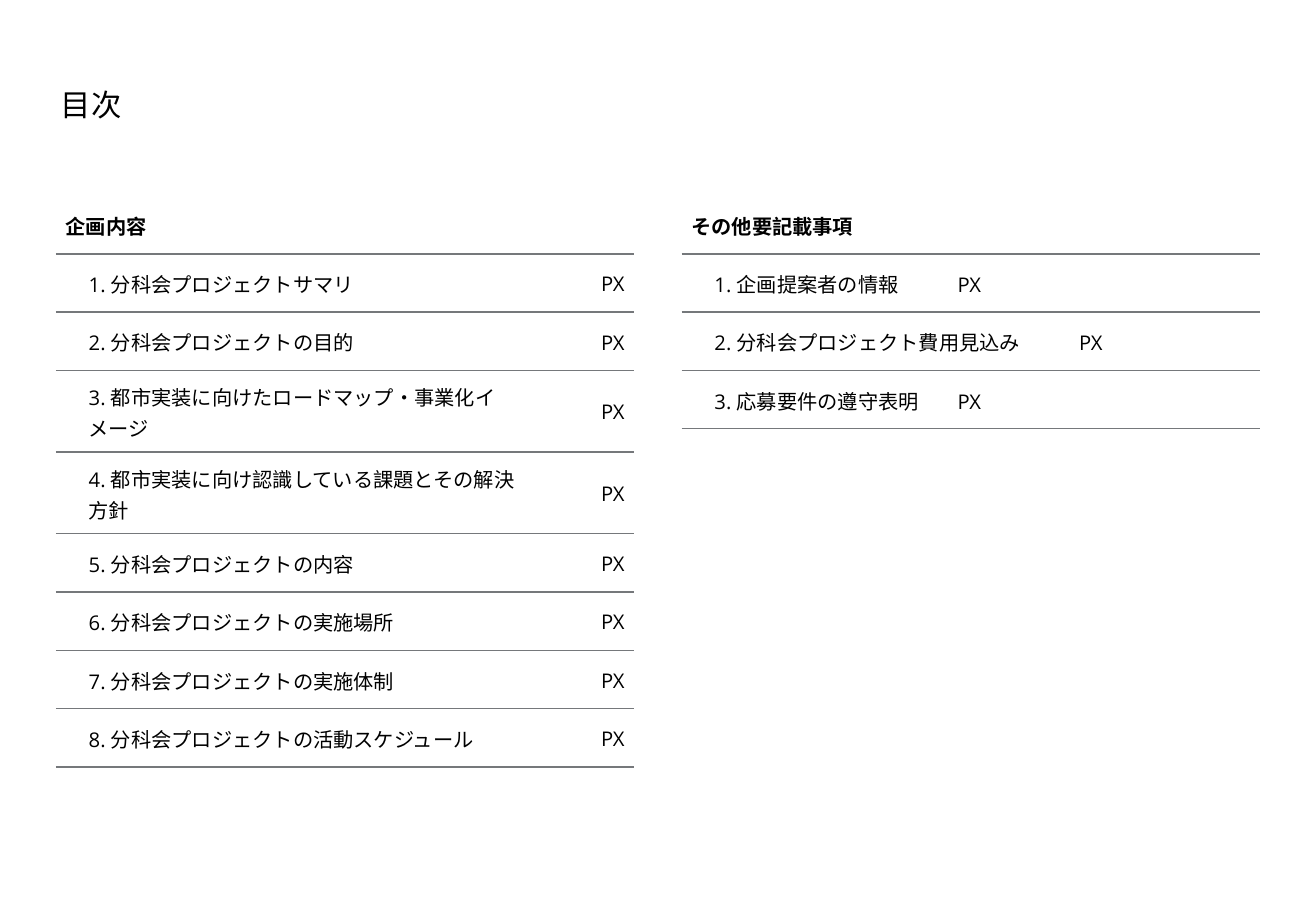
"""Builds the table-of-contents slide with two ruled lists."""
from lxml import etree
from pptx import Presentation, util as u
from pptx.dml.color import RGBColor
from pptx.enum import text
from pptx.oxml.ns import qn

COLORS = {"ink": "000000", "rule": "75787B", "paper": "FFFFFF"}
LATIN, JAPANESE = "Open Sans", "Noto Sans CJK JP"
MARGIN, LIST_TOP, LIST_WIDTH, ROW = 0.46, 1.61, 4.76, 0.48
PAGE_WIDTH, INSET, INDENT, TAB = 0.81, 0.08, 0.19, 4.51


def style(paragraph, size, bold=False):
    paragraph.font.size = u.Pt(size)
    paragraph.font.bold = bold
    paragraph.font.color.rgb = RGBColor.from_string(COLORS["ink"])
    paragraph.font.name = LATIN
    defaults = paragraph._p.pPr.find(qn("a:defRPr"))
    etree.SubElement(defaults, qn("a:ea"), typeface=JAPANESE)


def rule(cell, sides):
    for position, side in enumerate(sides):
        line = etree.Element(qn(f"a:{side}"), w=str(u.Pt(1)))
        fill = etree.SubElement(line, qn("a:solidFill"))
        etree.SubElement(fill, qn("a:srgbClr"), val=COLORS["rule"])
        cell._tc.get_or_add_tcPr().insert(position, line)


deck = Presentation()
deck.slide_width, deck.slide_height = u.Inches(10.83), u.Inches(7.5)
slide = deck.slides.add_slide(deck.slide_layouts[5])

title = slide.shapes.title
title.left, title.top = u.Inches(MARGIN), u.Inches(0.67)
title.width, title.height = u.Inches(9.92), u.Inches(0.79)
heading = title.text_frame
heading.text = "目次"
heading.auto_size = text.MSO_AUTO_SIZE.NONE
heading.vertical_anchor = text.MSO_ANCHOR.TOP
heading.margin_left = heading.margin_right = u.Inches(0.04)
heading.margin_top = heading.margin_bottom = u.Inches(0.04)
heading.paragraphs[0].alignment = text.PP_ALIGN.LEFT
style(heading.paragraphs[0], 18)

plan = [
    "分科会プロジェクトサマリ",
    "分科会プロジェクトの目的",
    "都市実装に向けたロードマップ・事業化イメージ",
    "都市実装に向け認識している課題とその解決方針",
    "分科会プロジェクトの内容",
    "分科会プロジェクトの実施場所",
    "分科会プロジェクトの実施体制",
    "分科会プロジェクトの活動スケジュール",
]
others = ["企画提案者の情報", "分科会プロジェクト費用見込み", "応募要件の遵守表明"]

plan_rows = [["企画内容", ""]]
plan_rows += [[f"{n}. {item}", "PX"] for n, item in enumerate(plan, 1)]
other_rows = [["その他要記載事項"]]
other_rows += [[f"{n}. {item}\tPX"] for n, item in enumerate(others, 1)]

lists = [
    (MARGIN, [LIST_WIDTH - PAGE_WIDTH, PAGE_WIDTH], plan_rows),
    (5.61, [LIST_WIDTH], other_rows),
]
for left, widths, rows in lists:
    contents = slide.shapes.add_table(
        len(rows), len(widths), u.Inches(left), u.Inches(LIST_TOP),
        u.Inches(LIST_WIDTH), u.Inches(ROW * len(rows))).table
    contents.first_row = contents.horz_banding = False
    contents._tbl.tblPr.find(qn("a:tableStyleId")).text = "{2D5ABB26-0587-4C30-8999-92F81FD0307C}"
    for column, width in zip(contents.columns, widths):
        column.width = u.Inches(width)
    for r, row in enumerate(rows):
        contents.rows[r].height = u.Inches(ROW)
        for c, entry in enumerate(row):
            cell = contents.cell(r, c)
            cell.text = entry
            cell.vertical_anchor = text.MSO_ANCHOR.MIDDLE
            cell.margin_left = cell.margin_right = u.Inches(INSET)
            cell.margin_top = cell.margin_bottom = u.Inches(INSET)
            cell.fill.solid()
            cell.fill.fore_color.rgb = RGBColor.from_string(COLORS["paper"])
            rule(cell, ["lnT", "lnB"] if r else ["lnB"])
            paragraph = cell.text_frame.paragraphs[0]
            paragraph.line_spacing = 1.06
            paragraph.alignment = text.PP_ALIGN.RIGHT if c else text.PP_ALIGN.LEFT
            properties = paragraph._p.get_or_add_pPr()
            if r:
                properties.set("marL", str(u.Inches(INDENT)))
                properties.set("indent", "0")
            if "\t" in entry:
                tabs = etree.SubElement(properties, qn("a:tabLst"))
                etree.SubElement(tabs, qn("a:tab"), pos=str(u.Inches(TAB)), algn="r")
            style(paragraph, 12, bold=r == 0)

deck.save("out.pptx")
